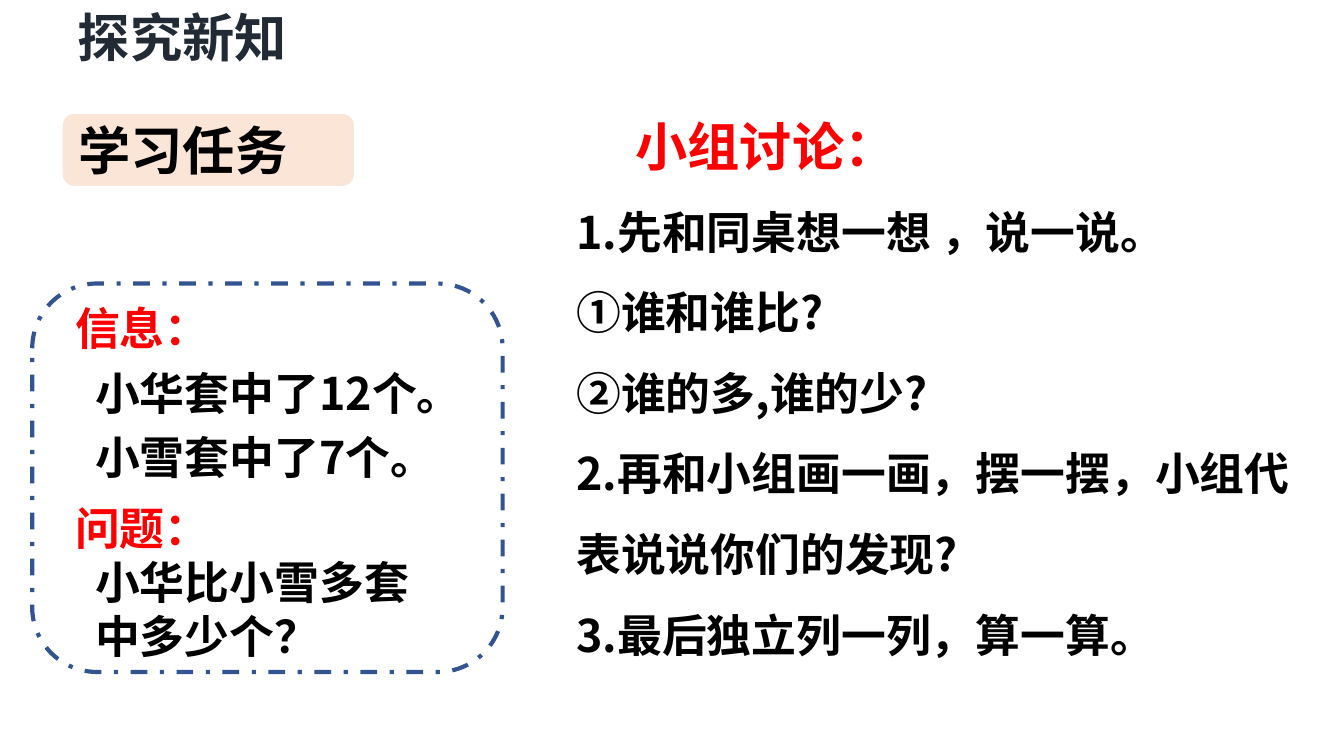
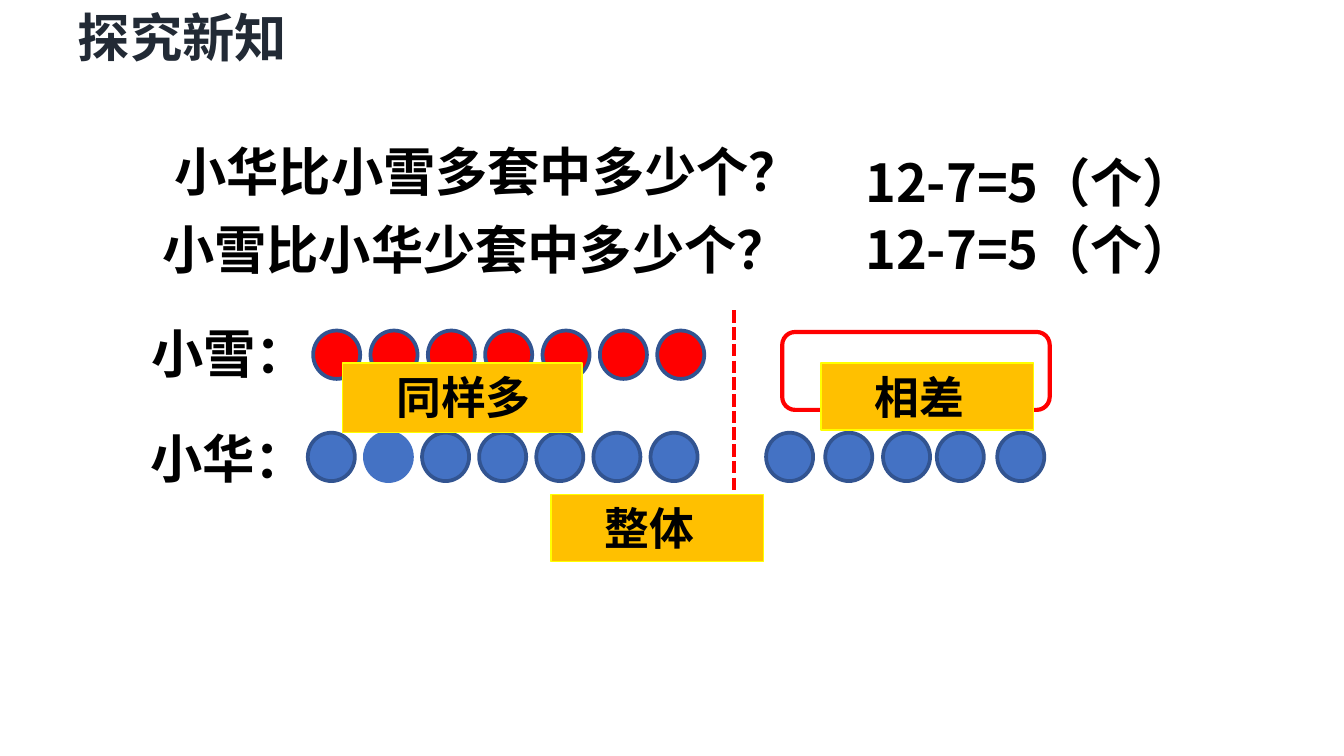
from pptx import Presentation, util as u
from pptx.dml import color
from pptx.enum import dml, shapes, text
from pptx.oxml import ns, xmlchemy

FONT = "Noto Sans CJK SC"
BLACK, RED, TITLE = "000000", "FF0000", "222A35"
BLUE, DARK_BLUE = "4472C4", "325491"
GOLD, YELLOW, PEACH, WHITE = "FFC000", "FFFF00", "FBE5D6", "FFFFFF"
LARGE, MEDIUM = 28, 24
SLIDE_WIDTH = 10


def rgb(value):
    return color.RGBColor.from_string(value)


def box_lengths(box):
    return [u.Inches(value) for value in box]


def write(shape, lines, anchor=text.MSO_ANCHOR.TOP, wrap=True):
    """Each line is (words, size, colour, line spacing, indent)."""
    frame = shape.text_frame
    frame.word_wrap = wrap
    frame.vertical_anchor = anchor
    for index, (words, size, colour, spacing, indent) in enumerate(lines):
        paragraph = frame.paragraphs[0] if index == 0 else frame.add_paragraph()
        paragraph.text = words
        paragraph.alignment = text.PP_ALIGN.LEFT
        paragraph.line_spacing = spacing
        properties = paragraph._p.get_or_add_pPr()
        properties.set("marL", str(u.Inches(indent)))
        properties.set("indent", "0")
        font = paragraph.font
        font.name, font.size, font.bold = FONT, u.Pt(size), True
        font.color.rgb = rgb(colour)
        # East Asian typeface beside the Latin one
        east_asian = xmlchemy.OxmlElement("a:ea")
        east_asian.set("typeface", FONT)
        properties.find(ns.qn("a:defRPr")).append(east_asian)


def add_text(slide, box, lines, wrap=True):
    shape = slide.shapes.add_textbox(*box_lengths(box))
    write(shape, lines, wrap=wrap)
    return shape


def add_shape(slide, kind, box, fill, line, width, dash=None):
    shape = slide.shapes.add_shape(kind, *box_lengths(box))
    shape.shadow.inherit = False
    if fill:
        shape.fill.solid()
        shape.fill.fore_color.rgb = rgb(fill)
    else:
        shape.fill.background()
    shape.line.color.rgb = rgb(line)
    shape.line.width = u.Pt(width)
    if dash:
        shape.line.dash_style = dash
    return shape


def add_slide(presentation):
    """Blank slide with the shared section title."""
    slide = presentation.slides.add_slide(presentation.slide_layouts[6])
    title = add_text(slide, (0.51, 0, 2.02, 0.55),
                     [("探究新知", LARGE, TITLE, 1, 0)])
    frame = title.text_frame
    frame.margin_left = frame.margin_right = u.Inches(0.07)
    frame.margin_top = frame.margin_bottom = u.Inches(0.04)
    return slide


def add_discussion(slide, box):
    steps = ["1.先和同桌想一想 ，说一说。", "①谁和谁比?", "②谁的多,谁的少?",
             "2.再和小组画一画，摆一摆，小组代表说说你们的发现?",
             "3.最后独立列一列，算一算。"]
    lines = [("小组讨论：", LARGE, RED, 1.5, 0.44)]
    lines += [(step, MEDIUM, BLACK, 1.5, 0) for step in steps]
    add_text(slide, box, lines)


def add_task_badge(slide, box):
    badge = add_shape(slide, shapes.MSO_SHAPE.ROUNDED_RECTANGLE, box, PEACH, WHITE, 1)
    write(badge, [("学习任务", LARGE, BLACK, 1, 0)], text.MSO_ANCHOR.MIDDLE)


def add_problem_panel(slide, box):
    left, top, width, height = box
    parts = [  # offset, height, heading, spacing, lines
        (0, 1.89, "信息：", 1.2, ["小华套中了12个。", "小雪套中了7个。"]),
        (1.49, 1.39, "问题：", 1, ["小华比小雪多套", "中多少个？"]),
    ]
    for offset, part_height, heading, spacing, body in parts:
        lines = [(heading, MEDIUM, RED, 1.2, 0)]
        lines += [(words, MEDIUM, BLACK, spacing, 0.15) for words in body]
        add_text(slide, (left + 0.22, top + offset, width + 0.11, part_height), lines)
    add_shape(slide, shapes.MSO_SHAPE.ROUNDED_RECTANGLE, box, None, DARK_BLUE, 2.25,
              dml.MSO_LINE.DASH_DOT)


def add_questions(slide, box):
    left, top, width, height = box
    rows = [  # question, its offset and width, answer offset
        ("小华比小雪多套中多少个？", (0.09, 0, 5.01), 0.08),
        ("小雪比小华少套中多少个？", (0, 0.58, 5.21), 0.58),
    ]
    for question, (across, down, question_width), answer_down in rows:
        add_text(slide, (left + across, top + down, question_width, height),
                 [(question, LARGE, BLACK, 1, 0.18)])
        add_text(slide, (left + 5.41, top + answer_down, width - 5.41, height),
                 [("12-7=5（个）", LARGE, BLACK, 1, 0)])


def add_label(slide, box, words):
    label = add_shape(slide, shapes.MSO_SHAPE.RECTANGLE, box, GOLD, YELLOW, 0.75)
    write(label, [(words, MEDIUM, BLACK, 1, 0.3)])


def add_rings(slide, lefts, top, fill, plain=None):
    """Row of counters; the one numbered plain has an outline like its fill."""
    for index, left in enumerate(lefts):
        add_shape(slide, shapes.MSO_SHAPE.OVAL, (left, top, 0.35, 0.36), fill,
                  fill if index == plain else DARK_BLUE, 2)


def add_divider(slide, x, top, bottom):
    divider = slide.shapes.add_connector(
        shapes.MSO_CONNECTOR.STRAIGHT, *box_lengths((x, top, x, bottom)))
    divider.line.color.rgb = rgb(RED)
    divider.line.width = u.Pt(2.25)
    divider.line.dash_style = dml.MSO_LINE.SQUARE_DOT
    divider._element.spPr.append(xmlchemy.OxmlElement("a:effectLst"))


def add_comparison(slide, box):
    left, top, width, height = box
    add_divider(slide, left + 4.44, top, top + 1.35)
    for name, across, down in (("小雪：", 0.01, 0.03), ("小华：", 0, 0.81)):
        add_text(slide, (left + across, top + down, 1.37, 0.57),
                 [(name, LARGE, BLACK, 1, 0)], wrap=False)

    # Seven matched pairs, then the five left over
    add_rings(slide, [left + 1.31 + 2.56 * i / 6 for i in range(7)], top + 0.15, RED)
    add_rings(slide, [left + 1.27 + 2.55 * i / 6 for i in range(7)], top + 0.91, BLUE, 1)
    extras = (4.68, 5.12, 5.55, 5.95, 6.4)
    add_rings(slide, [left + extra for extra in extras], top + 0.91, BLUE)

    # Outline of the difference and the three labels
    add_shape(slide, shapes.MSO_SHAPE.FLOWCHART_ALTERNATE_PROCESS,
              (left + 4.8, top + 0.16, width - 4.8, 0.58), None, RED, 2.25)
    add_label(slide, (left + 1.53, top + 0.39, 1.78, 0.52), "同样多")
    add_label(slide, (left + 5.09, top + 0.39, 1.58, 0.5), "相差")
    add_label(slide, (left + 3.08, top + height - 0.5, 1.58, 0.5), "整体")


def main():
    presentation = Presentation()
    presentation.slide_width = u.Inches(SLIDE_WIDTH)
    presentation.slide_height = u.Inches(SLIDE_WIDTH * 9 / 16)

    task = add_slide(presentation)
    add_discussion(task, (4.19, 0.57, 5.52, 4.95))
    add_task_badge(task, (0.46, 0.84, 2.18, 0.55))
    add_problem_panel(task, (0.24, 2.11, 3.5, 2.89))

    solution = add_slide(presentation)
    add_questions(solution, (0.93, 0.99, 8.5, 0.57))
    add_comparison(solution, (1.02, 2.31, 6.79, 1.87))

    presentation.save("out.pptx")


if __name__ == "__main__":
    main()
